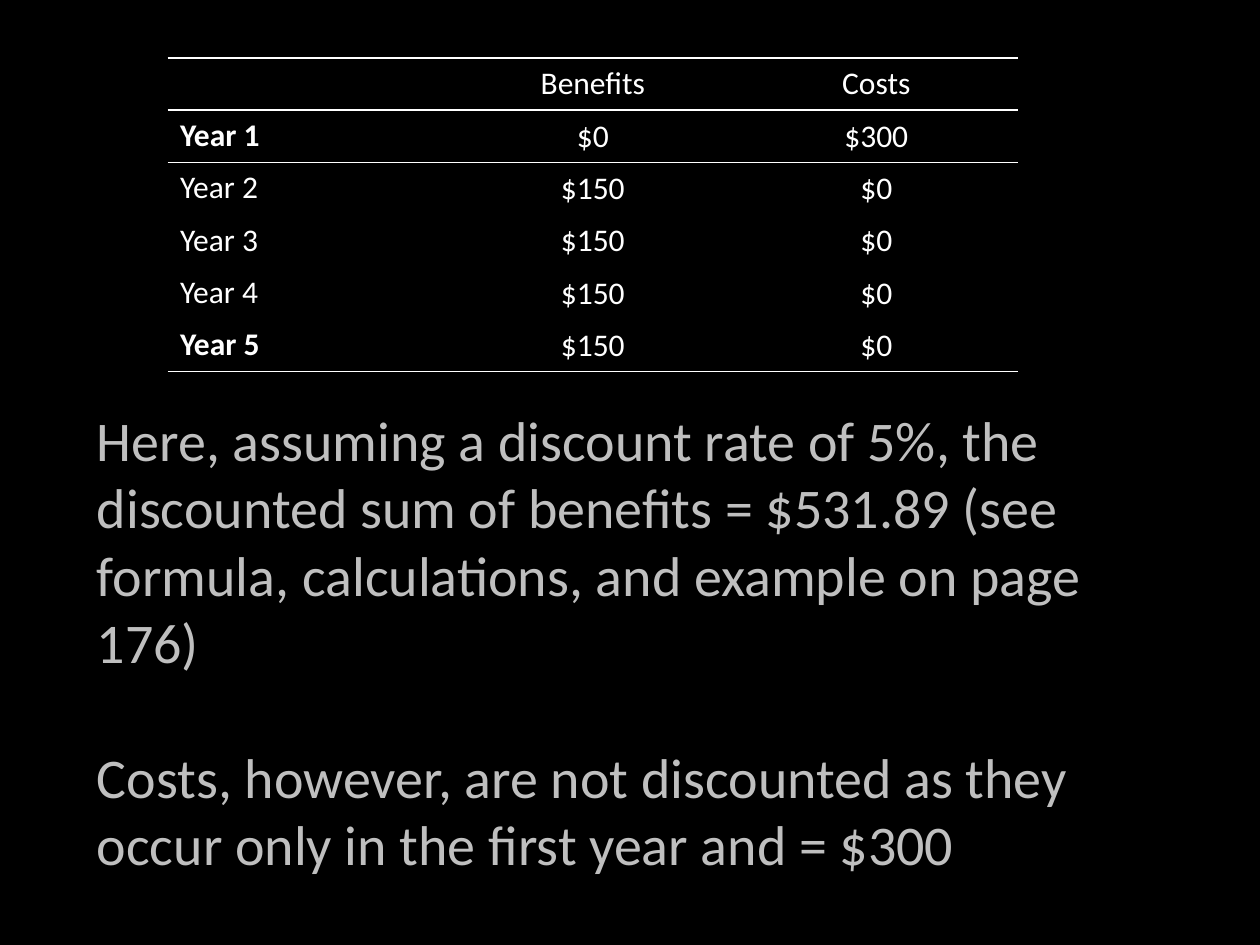
from dataclasses import dataclass

from lxml import etree
from pptx import Presentation
from pptx.dml.color import RGBColor
from pptx.enum.text import MSO_ANCHOR, PP_ALIGN
from pptx.oxml.ns import qn
from pptx.util import Inches, Pt

LEFT, CENTER = PP_ALIGN.LEFT, PP_ALIGN.CENTER
TOP, MIDDLE = MSO_ANCHOR.TOP, MSO_ANCHOR.MIDDLE
PLAIN = "{2D5ABB26-0587-4C30-8999-92F81FD0307C}"  # No Style, No Grid


@dataclass
class Theme:
    font: str = "Calibri"
    back: str = "000000"
    line: str = "FFFFFF"
    cell: str = "FFFFFF"
    body: str = "BFBFBF"
    small: int = 18
    large: int = 32


theme = Theme()


def write(para, text, size=theme.small, color=theme.cell, bold=False, align=LEFT):
    para.alignment = align
    run = para.add_run()
    run.text = text
    run.font.name = theme.font
    run.font.size = Pt(size)
    run.font.bold = bold
    run.font.color.rgb = RGBColor.from_string(color)


def rule(cell, side):
    line = etree.SubElement(cell._tc.get_or_add_tcPr(), qn(f"a:{side}"), w=str(Pt(1)))
    fill = etree.SubElement(line, qn("a:solidFill"))
    etree.SubElement(fill, qn("a:srgbClr"), val=theme.line)


# Slide
deck = Presentation()
deck.slide_width, deck.slide_height = Inches(10), Inches(7.5)
slide = deck.slides.add_slide(deck.slide_layouts[6])
slide.background.fill.solid()
slide.background.fill.fore_color.rgb = RGBColor.from_string(theme.back)

# Table of benefits and costs
rows = [
    ("", "Benefits", "Costs"),
    ("Year 1", "$0", "$300"),
    ("Year 2", "$150", "$0"),
    ("Year 3", "$150", "$0"),
    ("Year 4", "$150", "$0"),
    ("Year 5", "$150", "$0"),
]
last = len(rows) - 1
table = slide.shapes.add_table(
    len(rows), 3, Inches(1.33), Inches(0.46), Inches(6.75), Inches(2.49)
).table
table.first_row = table.horz_banding = False
table._tbl.tblPr.find(qn("a:tableStyleId")).text = PLAIN

for r, row in enumerate(rows):
    for c, text in enumerate(row):
        cell = table.cell(r, c)
        if r <= 1:
            rule(cell, "lnT")
        if r in (0, last):
            rule(cell, "lnB")
        cell.fill.background()
        cell.vertical_anchor = MIDDLE if r and c else TOP
        if text:
            write(cell.text_frame.paragraphs[0], text,
                  bold=c == 0 and r in (1, last), align=CENTER if c else LEFT)

# Explanation below the table
notes = [
    "Here, assuming a discount rate of 5%, the discounted sum of benefits = $531.89 "
    "(see formula, calculations, and example on page 176)",
    "Costs, however, are not discounted as they occur only in the first year and = $300",
]
frame = slide.shapes.add_textbox(
    Inches(0.67), Inches(3.17), Inches(8.58), Inches(3.87)
).text_frame
frame.word_wrap = True
for i, text in enumerate(notes):
    para = frame.add_paragraph() if i else frame.paragraphs[0]
    para.space_before = Pt(39 * i)
    write(para, text, size=theme.large, color=theme.body)

deck.save("out.pptx")
